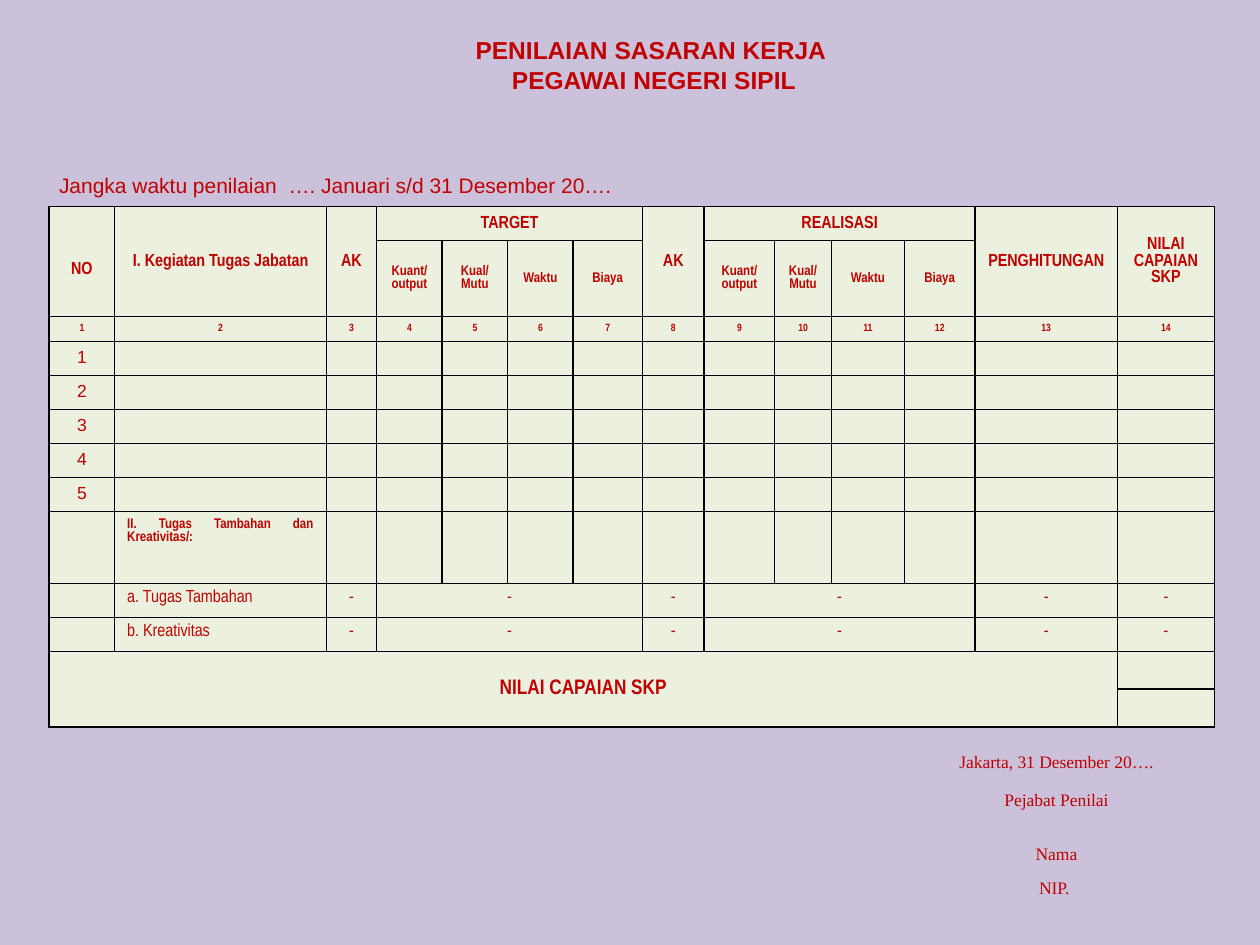
from lxml.etree import SubElement
from pptx import Presentation
from pptx.dml.color import RGBColor
from pptx.enum.text import MSO_ANCHOR as Anchor, MSO_AUTO_SIZE as AutoSize, PP_ALIGN as Align
from pptx.oxml.ns import qn
from pptx.util import Inches, Pt

COLORS = {"background": "CCC1DA", "text": "C00000", "cell": "EBF1DE", "border": "000000"}
NO_STYLE = "{2D5ABB26-0587-4C30-8999-92F81FD0307C}"
NARROW = "Arial Narrow"
HEADING = {"name": NARROW, "size": Pt(10), "bold": True}
SUBHEADING = {**HEADING, "size": Pt(8)}
INDEX = {**HEADING, "size": Pt(6)}
TOTAL = {**HEADING, "size": Pt(12)}
ENTRY = {"name": NARROW, "size": Pt(10), "bold": False}
NUMBER = {**ENTRY, "name": "Arial"}
SIGNATURE = {**ENTRY, "name": "Times New Roman"}


class SlideBuilder:
    """Holds the style and the current slide and adds each kind of element."""

    def __init__(self, presentation):
        self.slide = presentation.slides.add_slide(presentation.slide_layouts[5])
        fill = self.slide.background.fill
        fill.solid()
        fill.fore_color.rgb = RGBColor.from_string(COLORS["background"])

    def add_lines(self, frame, lines, font, align=Align.CENTER):
        for index, line in enumerate(lines):
            paragraph = frame.paragraphs[0] if index == 0 else frame.add_paragraph()
            paragraph.alignment = align
            run = paragraph.add_run()
            run.text = line
            for key, value in font.items():
                setattr(run.font, key, value)
            run.font.color.rgb = RGBColor.from_string(COLORS["text"])

    def place(self, shape, left, top, width, height):
        for key, value in {"left": left, "top": top, "width": width, "height": height}.items():
            setattr(shape, key, Inches(value))

    def title(self, lines, *box):
        shape = self.slide.shapes.title
        self.place(shape, *box)
        frame = shape.text_frame
        frame.word_wrap = False
        frame.auto_size = AutoSize.SHAPE_TO_FIT_TEXT
        frame.vertical_anchor = Anchor.MIDDLE
        self.add_lines(frame, lines, {"name": "Arial", "size": Pt(14), "bold": True})

    def text(self, line, font, *box):
        frame = self.slide.shapes.add_textbox(*map(Inches, box)).text_frame
        frame.word_wrap = True
        frame.auto_size = AutoSize.SHAPE_TO_FIT_TEXT
        self.add_lines(frame, [line], font, Align.LEFT)

    def table(self, left, top, widths, heights, filled):
        box = map(Inches, (left, top, sum(widths), sum(heights)))
        table = self.slide.shapes.add_table(len(heights), len(widths), *box).table
        table.first_row = table.horz_banding = False
        table._tbl.tblPr.find(qn("a:tableStyleId")).text = NO_STYLE
        for column, width in zip(table.columns, widths):
            column.width = Inches(width)
        for row, height in zip(table.rows, heights):
            row.height = Inches(height)
        for cell in table.iter_cells():
            cell.text_frame.paragraphs[0]._p.get_or_add_endParaRPr().set("sz", "600")
            if filled:
                self.border(cell)
                cell.fill.solid()
                cell.fill.fore_color.rgb = RGBColor.from_string(COLORS["cell"])
        return table

    def border(self, cell):
        properties = cell._tc.get_or_add_tcPr()
        for side in ("lnL", "lnR", "lnT", "lnB"):
            line = SubElement(properties, qn(f"a:{side}"), w=str(Pt(1)))
            fill = SubElement(line, qn("a:solidFill"))
            SubElement(fill, qn("a:srgbClr"), val=COLORS["border"])

    def cell(self, table, row, column, text, font, align=Align.CENTER, anchor=Anchor.TOP, span=(1, 1)):
        cell = table.cell(row, column)
        if span != (1, 1):
            cell.merge(table.cell(row + span[0] - 1, column + span[1] - 1))
        cell.vertical_anchor = anchor
        self.add_lines(cell.text_frame, text.split("\n"), font, align)


def add_assessment(builder):
    widths = [0.52, 1.68, 0.4, 0.52, 0.52, 0.52, 0.55, 0.49, 0.56, 0.45, 0.58, 0.56, 1.13, 0.77]
    heights = [0.27, 0.6, 0.2] + [0.27] * 5 + [0.57, 0.27, 0.27, 0.3, 0.3]
    table = builder.table(0.39, 1.64, widths, heights, True)
    middle = {"anchor": Anchor.MIDDLE}
    headings = {0: "NO", 1: "I. Kegiatan Tugas Jabatan", 2: "AK", 7: "AK",
                12: "PENGHITUNGAN", 13: "NILAI\nCAPAIAN\nSKP"}
    for column, heading in headings.items():
        builder.cell(table, 0, column, heading, HEADING, span=(2, 1), **middle)
    table.cell(0, 0).margin_top = Inches(0.18)
    for start, heading in {3: "TARGET", 8: "REALISASI"}.items():
        builder.cell(table, 0, start, heading, HEADING, span=(1, 4), **middle)
        for offset, measure in enumerate(("Kuant/ output", "Kual/ Mutu", "Waktu", "Biaya")):
            builder.cell(table, 1, start + offset, measure, SUBHEADING, **middle)
    for column in range(len(widths)):
        builder.cell(table, 2, column, str(column + 1), INDEX, **middle)
    for number in range(1, 6):
        builder.cell(table, number + 2, 0, str(number), NUMBER)
    builder.cell(table, 8, 1, "II. Tugas Tambahan dan Kreativitas/:", SUBHEADING, Align.JUSTIFY)
    for row, task in {9: "a. Tugas Tambahan", 10: "b. Kreativitas"}.items():
        builder.cell(table, row, 1, task, ENTRY, Align.JUSTIFY)
        for column, span in {2: 1, 3: 4, 7: 1, 8: 4, 12: 1, 13: 1}.items():
            builder.cell(table, row, column, "-", ENTRY, span=(1, span))
    builder.cell(table, 11, 0, "NILAI CAPAIAN SKP", TOTAL, span=(2, 13), **middle)


def add_signature(builder):
    table = builder.table(3.51, 5.93, [3.5, 2.75], [0.3, 0.43, 0.27, 0.27], False)
    for row, line in enumerate(("Jakarta, 31 Desember 20….", "Pejabat Penilai", "Nama", "NIP. ")):
        builder.cell(table, row, 1, line, SIGNATURE)


def main():
    presentation = Presentation()
    presentation.slide_width, presentation.slide_height = Inches(10), Inches(7.5)
    builder = SlideBuilder(presentation)
    builder.title(["PENILAIAN SASARAN KERJA ", "PEGAWAI NEGERI SIPIL"], 3.66, 0.23, 3.06, 0.57)
    builder.text("Jangka waktu penilaian  …. Januari s/d 31 Desember 20….",
                 {"name": "Arial", "size": Pt(12)}, 0.37, 1.32, 4.79, 0.3)
    add_assessment(builder)
    add_signature(builder)
    presentation.save("out.pptx")


if __name__ == "__main__":
    main()
